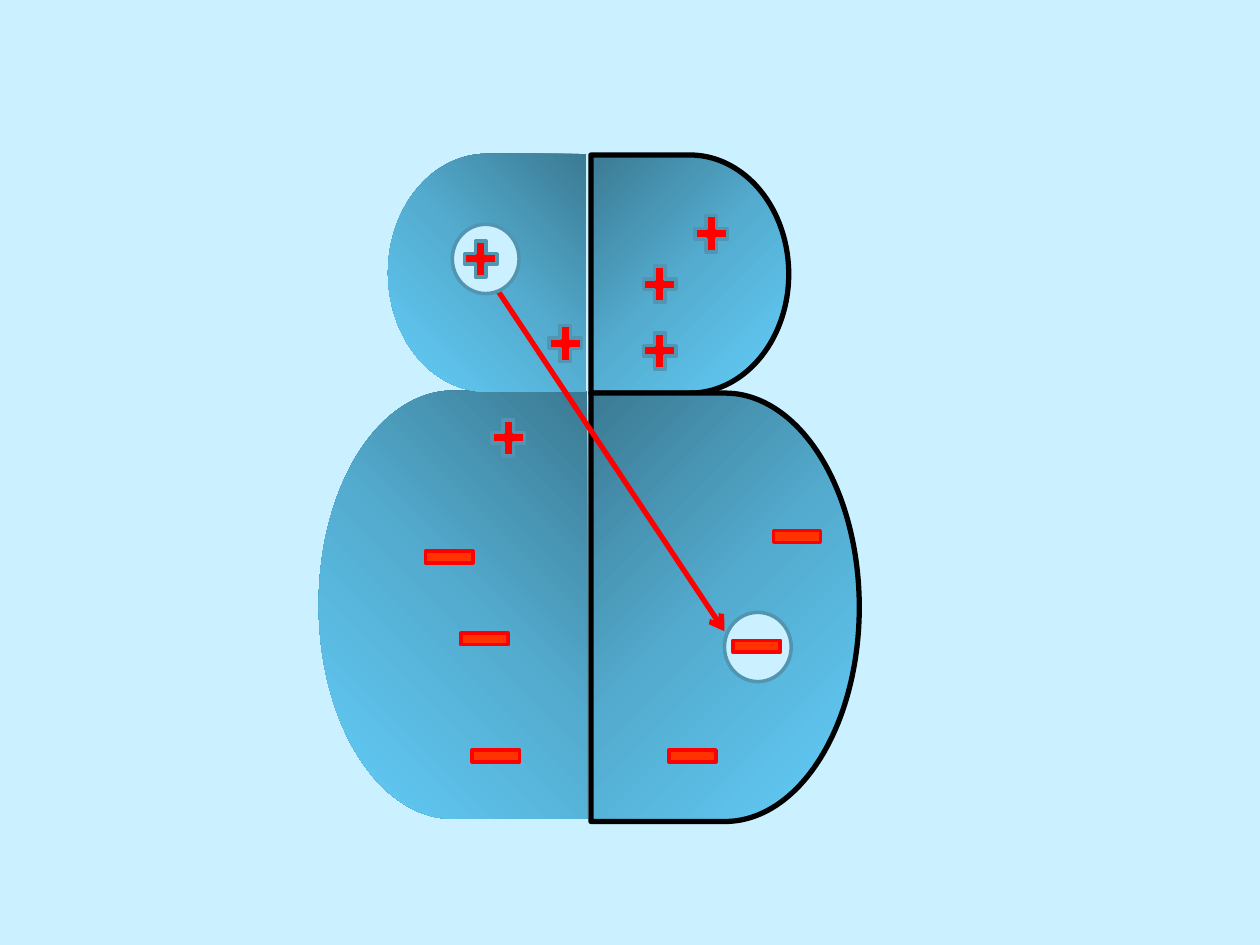
from copy import deepcopy
from dataclasses import dataclass

from pptx import Presentation
from pptx.dml.color import RGBColor
from pptx.enum.shapes import MSO_CONNECTOR as Connector, MSO_SHAPE as Shape
from pptx.oxml.ns import qn
from pptx.util import Inches, Pt
from lxml.etree import SubElement


@dataclass(frozen=True)
class Theme:
    """Colours and line widths of the slide."""
    sky: str = "CBF0FF"
    shades: tuple = ("3B7A93", "54ADD1", "63CDF8")
    outline: str = "000000"
    rim: str = "5195B0"
    red: str = "FF0000"
    orange: str = "FF3300"
    thick: float = 3
    thin: float = 2


THEME = Theme()
PLUS_SIZE = (0.35, 0.39)
MINUS_SIZE = (0.51, 0.4)
RING_SIZE = (0.53, 0.55)
HEAD_SIZE = (1.57, 1.89)
BODY_SIZE = (2.13, 3.4)


def color(code):
    """Return the colour for a hexadecimal code."""
    return RGBColor.from_string(code)


def add_shape(page, kind, box, fill=None, line=None, width=THEME.thin):
    """Add a flat preset shape in a box of inches."""
    shape = page.shapes.add_shape(kind, *map(Inches, box))
    shape.shadow.inherit = False
    if fill:
        shape.fill.solid()
        shape.fill.fore_color.rgb = color(fill)
    if line:
        shape.line.color.rgb = color(line)
        shape.line.width = Pt(width)
    else:
        shape.line.fill.background()
    return shape


def shade(shape):
    """Fill a shape with the three-step diagonal gradient."""
    shape.fill.gradient()
    shape.fill.gradient_angle = 315
    stops = shape._element.spPr.find(qn("a:gradFill")).find(qn("a:gsLst"))
    stops.insert(1, deepcopy(stops[0]))
    for index, stop in enumerate(shape.fill.gradient_stops):
        stop.color.rgb = color(THEME.shades[index])
        stop.position = index / 2


def add_half(page, box, mirrored=False):
    """Add one rounded half, outlined on the right and mirrored on the left."""
    line = None if mirrored else THEME.outline
    half = add_shape(page, Shape.FLOWCHART_DELAY, box, line=line, width=THEME.thick)
    shade(half)
    if mirrored:
        half._element.spPr.find(qn("a:xfrm")).set("flipH", "1")


def add_figure(page):
    """Add the four halves of the figure."""
    add_half(page, (4.69, 1.23, *HEAD_SIZE))
    add_half(page, (2.53, 3.1, *BODY_SIZE), mirrored=True)
    add_half(page, (3.08, 1.22, *HEAD_SIZE), mirrored=True)
    add_half(page, (4.69, 3.12, *BODY_SIZE))


def add_arrow(page, start, end):
    """Add the red arrow between two points."""
    arrow = page.shapes.add_connector(
        Connector.STRAIGHT, *map(Inches, (*start, *end)))
    arrow.line.color.rgb = color(THEME.red)
    arrow.line.width = Pt(THEME.thick)
    SubElement(arrow.line._get_or_add_ln(), qn("a:tailEnd"), type="arrow")
    SubElement(arrow._element.spPr, qn("a:effectLst"))


def add_ring(page, spot):
    """Add a pale circle that marks a charge."""
    add_shape(page, Shape.OVAL, (*spot, *RING_SIZE), THEME.sky, THEME.rim)


def add_plus(page, spot):
    """Add a positive charge."""
    add_shape(page, Shape.MATH_PLUS, (*spot, *PLUS_SIZE), THEME.red, THEME.rim)


def add_minus(page, spot):
    """Add a negative charge."""
    add_shape(page, Shape.MATH_MINUS, (*spot, *MINUS_SIZE), THEME.orange, THEME.red)


def add_charges(page):
    """Add the two ringed charges and the loose ones."""
    for spot in ((3.59, 1.78), (5.75, 4.86)):
        add_ring(page, spot)
    for spot in ((3.64, 1.86), (3.86, 3.28), (5.47, 1.66),
                 (5.06, 2.59), (4.31, 2.53), (5.06, 2.06)):
        add_plus(page, spot)
    for spot in ((5.75, 4.93), (3.59, 4.87), (5.24, 5.8),
                 (3.68, 5.8), (3.31, 4.22), (6.07, 4.06)):
        add_minus(page, spot)


def main():
    """Build and save the deck."""
    deck = Presentation()
    deck.slide_width, deck.slide_height = Inches(10), Inches(7.5)
    page = deck.slides.add_slide(deck.slide_layouts[6])
    page.background.fill.solid()
    page.background.fill.fore_color.rgb = color(THEME.sky)
    add_figure(page)
    add_arrow(page, (3.86, 2.17), (5.75, 5.01))
    add_charges(page)
    deck.save("out.pptx")


if __name__ == "__main__":
    main()
